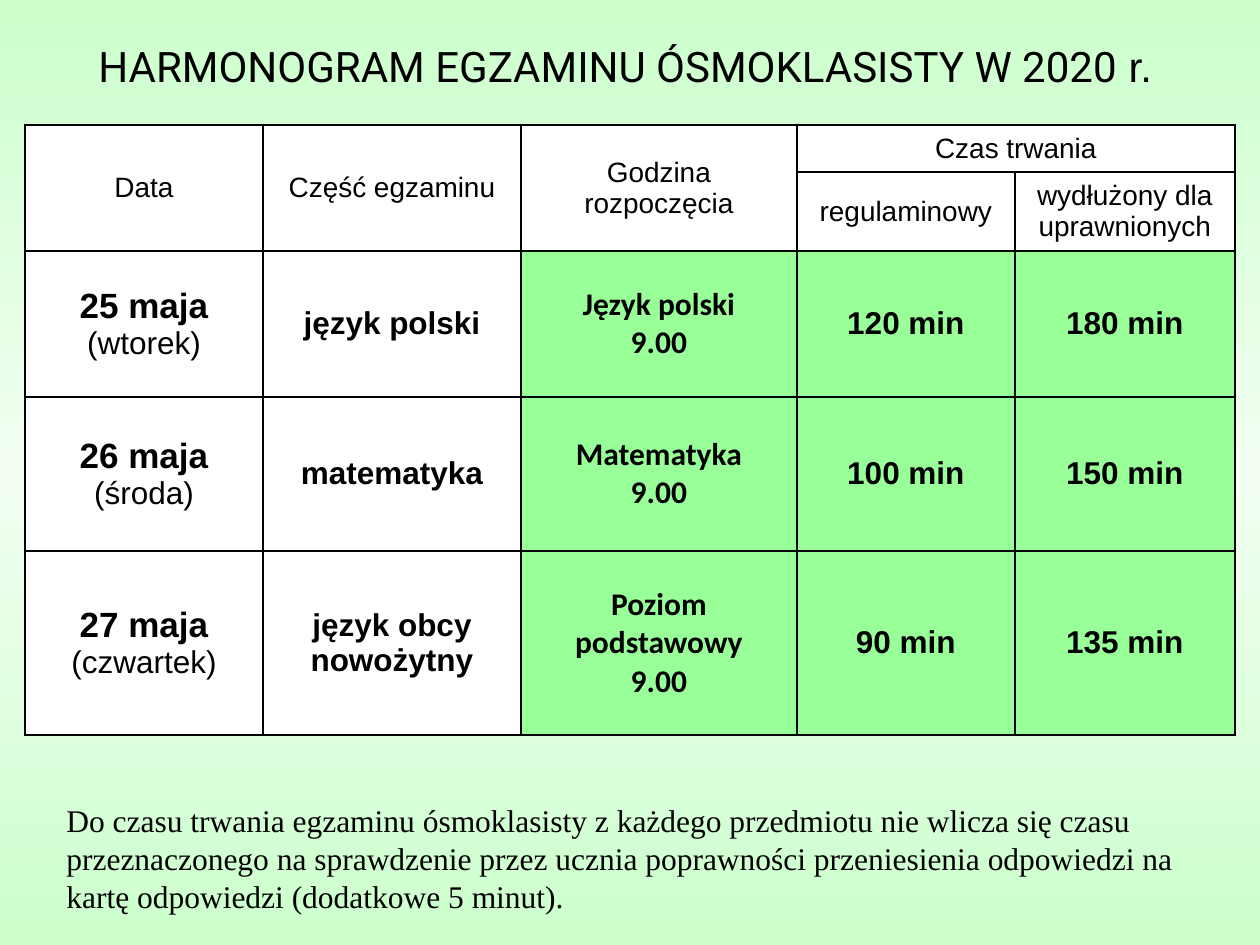
from copy import deepcopy
from dataclasses import dataclass

from lxml import etree
from pptx import Presentation
from pptx.dml.color import RGBColor
from pptx.enum.text import MSO_ANCHOR, PP_ALIGN
from pptx.oxml.ns import qn
from pptx.util import Emu, Pt

CENTER, LEFT = PP_ALIGN.CENTER, PP_ALIGN.LEFT
MIDDLE, TOP = MSO_ANCHOR.MIDDLE, MSO_ANCHOR.TOP
TITLE_ONLY = 5
EMU_PER_PX = 914400 / 126


@dataclass(frozen=True)
class Theme:
    ink: str = "000000"
    paper: str = "FFFFFF"
    highlight: str = "99FF99"
    backdrop: tuple = ("CCFFCC", "F2FFF2", "CCFFCC")
    body_font: str = "Arial"
    title_font: str = "Roboto"
    subject_font: str = "Calibri"
    note_font: str = "Times New Roman"
    title_size: int = 24
    date_size: int = 20
    body_size: int = 18
    header_size: int = 16
    border_width: int = 1


def px(length):
    return Emu(round(length * EMU_PER_PX))


def write_text(frame, *paragraphs, align=CENTER, anchor=MIDDLE, color="000000", **font):
    """Write paragraphs, each a string or a list of (text, font overrides) runs."""
    frame.word_wrap = True
    frame.vertical_anchor = anchor
    for index, content in enumerate(paragraphs):
        paragraph = frame.paragraphs[0] if index == 0 else frame.add_paragraph()
        paragraph.alignment = align
        for words, overrides in [(content, {})] if isinstance(content, str) else content:
            run = paragraph.add_run()
            run.text = words
            style = {"bold": False, **font, **overrides}
            run.font.name = style["name"]
            run.font.size = Pt(style["size"])
            run.font.bold = style["bold"]
            run.font.color.rgb = RGBColor.from_string(color)


class SlideBuilder:
    def __init__(self, slide, theme):
        self.slide = slide
        self.theme = theme

    def background(self):
        """Fill the slide with evenly spaced vertical gradient stops."""
        fill = self.slide.background.fill
        fill.gradient()
        fill.gradient_angle = 90
        stops = self.slide.element.find(".//" + qn("a:gsLst"))
        stops.insert(1, deepcopy(stops[0]))
        for index, color in enumerate(self.theme.backdrop):
            stops[index].set("pos", str(index * 50000))
            fill.gradient_stops[index].color.rgb = RGBColor.from_string(color)

    def title(self, left, top, width, height, *paragraphs, **style):
        title = self.slide.shapes.title
        title.left, title.top, title.width, title.height = map(px, (left, top, width, height))
        write_text(title.text_frame, *paragraphs, color=self.theme.ink, **style)

    def note(self, left, top, width, height, *paragraphs, **style):
        box = self.slide.shapes.add_textbox(*map(px, (left, top, width, height)))
        write_text(box.text_frame, *paragraphs, color=self.theme.ink, **style)

    def table(self, left, top, widths, heights):
        frame = self.slide.shapes.add_table(
            len(heights), len(widths), *map(px, (left, top, sum(widths), sum(heights))))
        table = frame.table
        for column, width in zip(table.columns, widths):
            column.width = px(width)
        for row, height in zip(table.rows, heights):
            row.height = px(height)
        for cell in table.iter_cells():
            self.border(cell)
        return table

    def border(self, cell):
        properties = cell._tc.get_or_add_tcPr()
        for side in ("a:lnL", "a:lnR", "a:lnT", "a:lnB"):
            line = etree.SubElement(properties, qn(side), w=str(Pt(self.theme.border_width)))
            solid = etree.SubElement(line, qn("a:solidFill"))
            etree.SubElement(solid, qn("a:srgbClr"), val=self.theme.ink)

    def cell(self, cell, *paragraphs, fill, **style):
        cell.fill.solid()
        cell.fill.fore_color.rgb = RGBColor.from_string(fill)
        write_text(cell.text_frame, *paragraphs, color=self.theme.ink, **style)
        cell.vertical_anchor = MIDDLE


HEADERS = [  # row, column, last row, last column, label
    (0, 0, 1, 0, "Data"),
    (0, 1, 1, 1, "Część egzaminu"),
    (0, 2, 1, 2, "Godzina rozpoczęcia"),
    (0, 3, 0, 4, "Czas trwania"),
    (1, 3, 1, 3, "regulaminowy"),
    (1, 4, 1, 4, "wydłużony dla uprawnionych"),
]
EXAMS = [
    ("25 maja ", "(wtorek)", "język polski", "Język polski", "120 min", "180 min"),
    ("26 maja ", "(środa)", "matematyka", "Matematyka", "100 min", "150 min"),
    ("27 maja ", "(czwartek)", "język obcy nowożytny", "Poziom podstawowy",
     "90 min", "135 min"),
]
START_TIME = "9.00"
NOTE = ("Do czasu trwania egzaminu ósmoklasisty z każdego przedmiotu nie wlicza się czasu "
        "przeznaczonego na sprawdzenie przez ucznia poprawności przeniesienia odpowiedzi na "
        "kartę odpowiedzi (dodatkowe 5 minut).")


def main():
    theme = Theme()
    deck = Presentation()
    deck.slide_width, deck.slide_height = px(1260), px(945)
    builder = SlideBuilder(deck.slides.add_slide(deck.slide_layouts[TITLE_ONLY]), theme)
    builder.background()
    builder.title(
        28, 34, 1206, 63,
        [("HARMONOGRAM EGZAMINU ÓSMOKLASISTY W 2020", {}),
         (" r. ", {"name": theme.body_font})],
        name=theme.title_font, size=theme.title_size)

    schedule = builder.table(25, 125, [238, 258, 276, 218, 220], [47, 79, 146, 154, 184])
    for row, column, last_row, last_column, label in HEADERS:
        header = schedule.cell(row, column)
        if (row, column) != (last_row, last_column):
            header.merge(schedule.cell(last_row, last_column))
        builder.cell(header, label, fill=theme.paper,
                     name=theme.body_font, size=theme.header_size)

    strong = {"name": theme.body_font, "size": theme.body_size, "bold": True}
    for row, (date, weekday, part, subject, *durations) in enumerate(EXAMS, start=2):
        dated = [(date, {"size": theme.date_size}), (weekday, {"bold": False})]
        builder.cell(schedule.cell(row, 0), dated, fill=theme.paper, **strong)
        builder.cell(schedule.cell(row, 1), part, fill=theme.paper, **strong)
        builder.cell(schedule.cell(row, 2), subject, START_TIME, fill=theme.highlight,
                     **{**strong, "name": theme.subject_font})
        for column, duration in enumerate(durations, start=3):
            builder.cell(schedule.cell(row, column), duration, fill=theme.highlight, **strong)

    builder.note(54, 795, 1178, 122, NOTE, align=LEFT, anchor=TOP,
                 name=theme.note_font, size=theme.body_size)
    deck.save("out.pptx")


if __name__ == "__main__":
    main()
